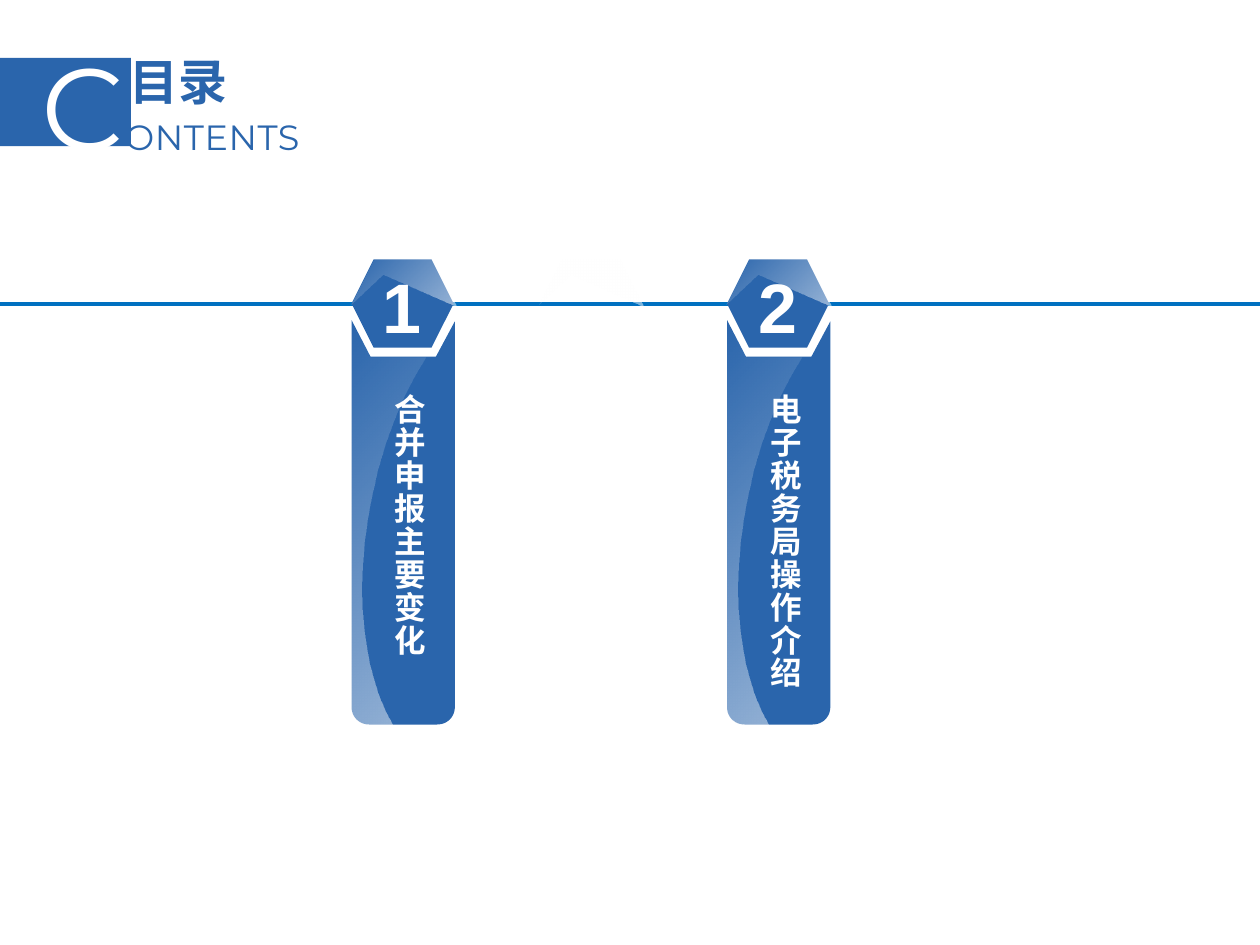
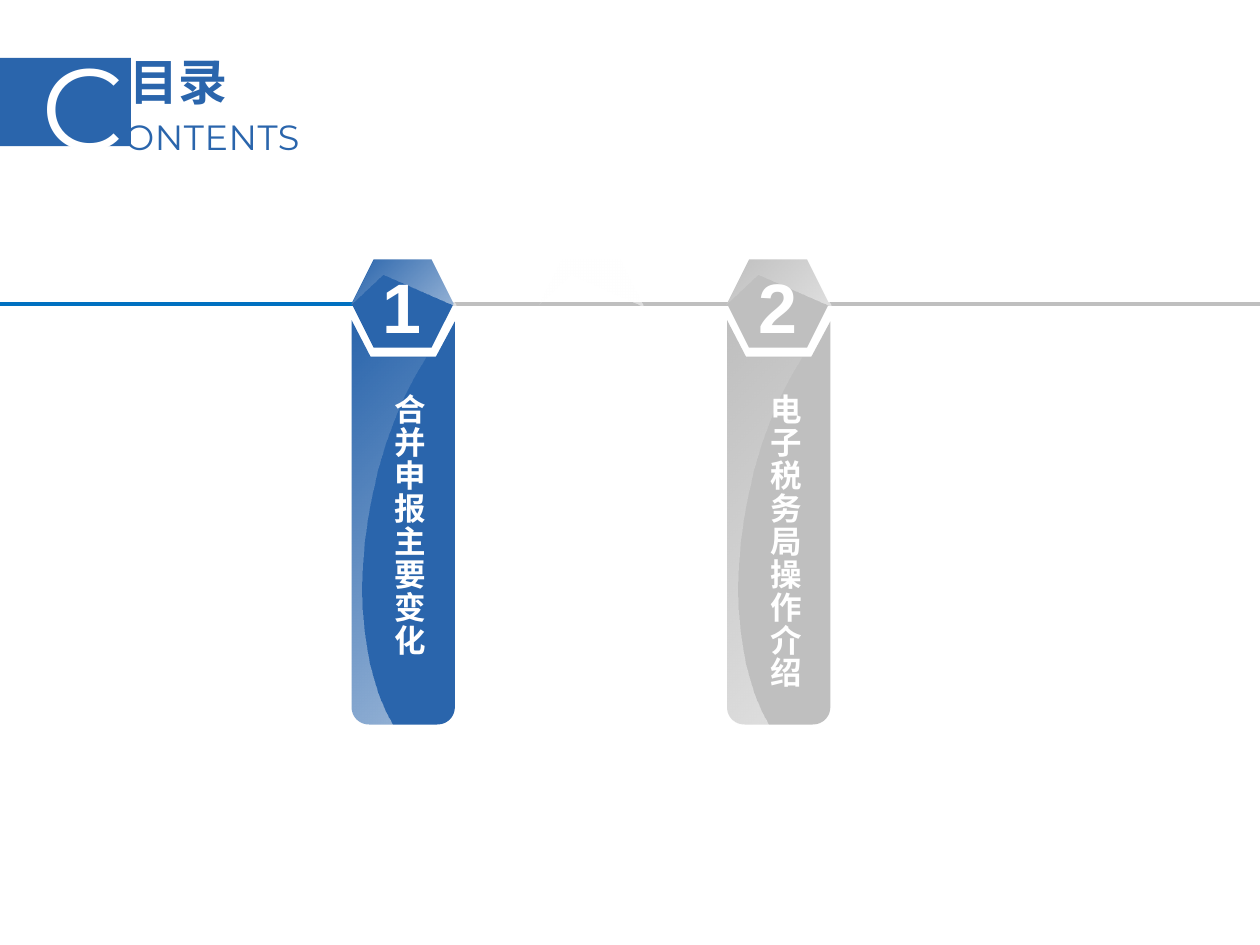
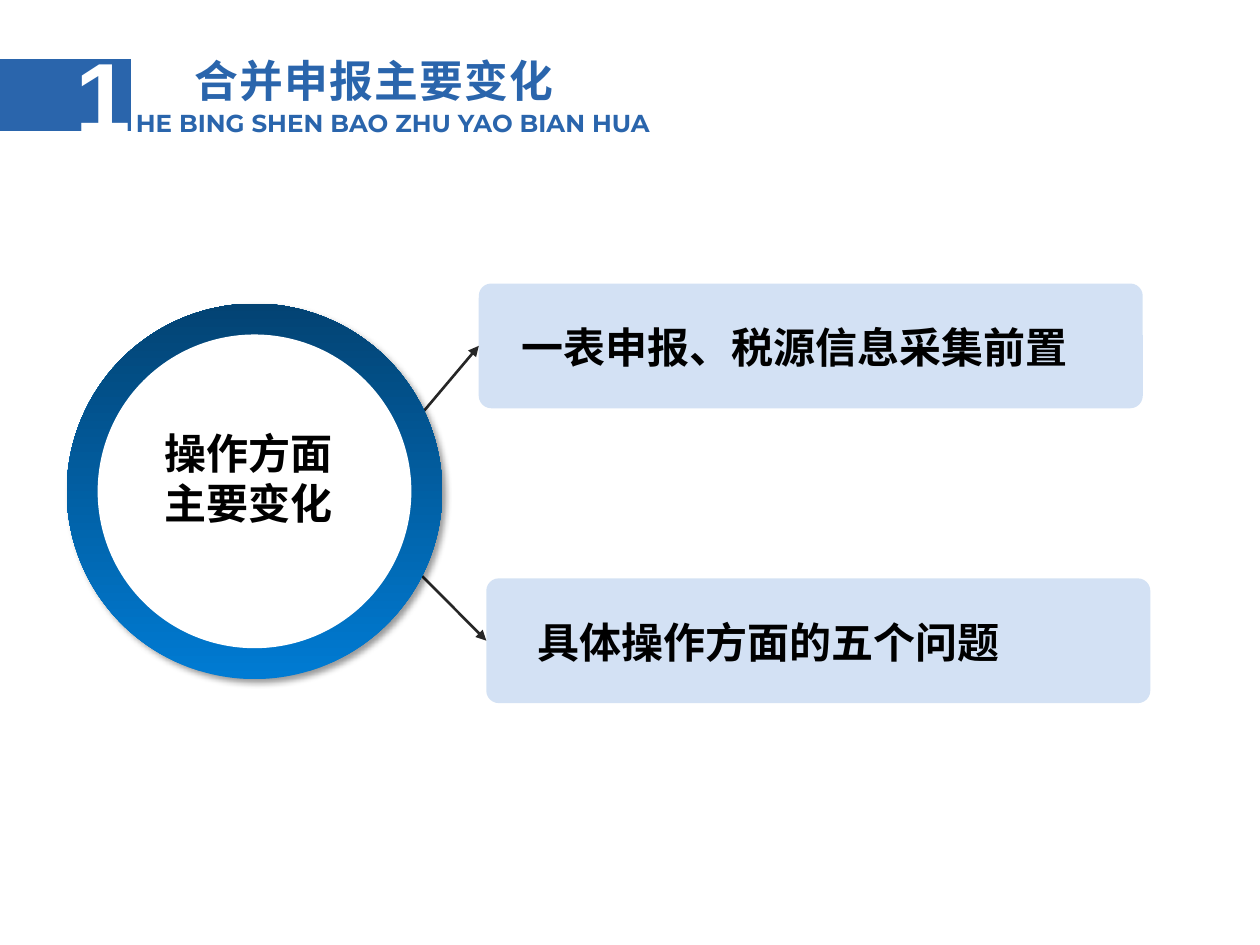
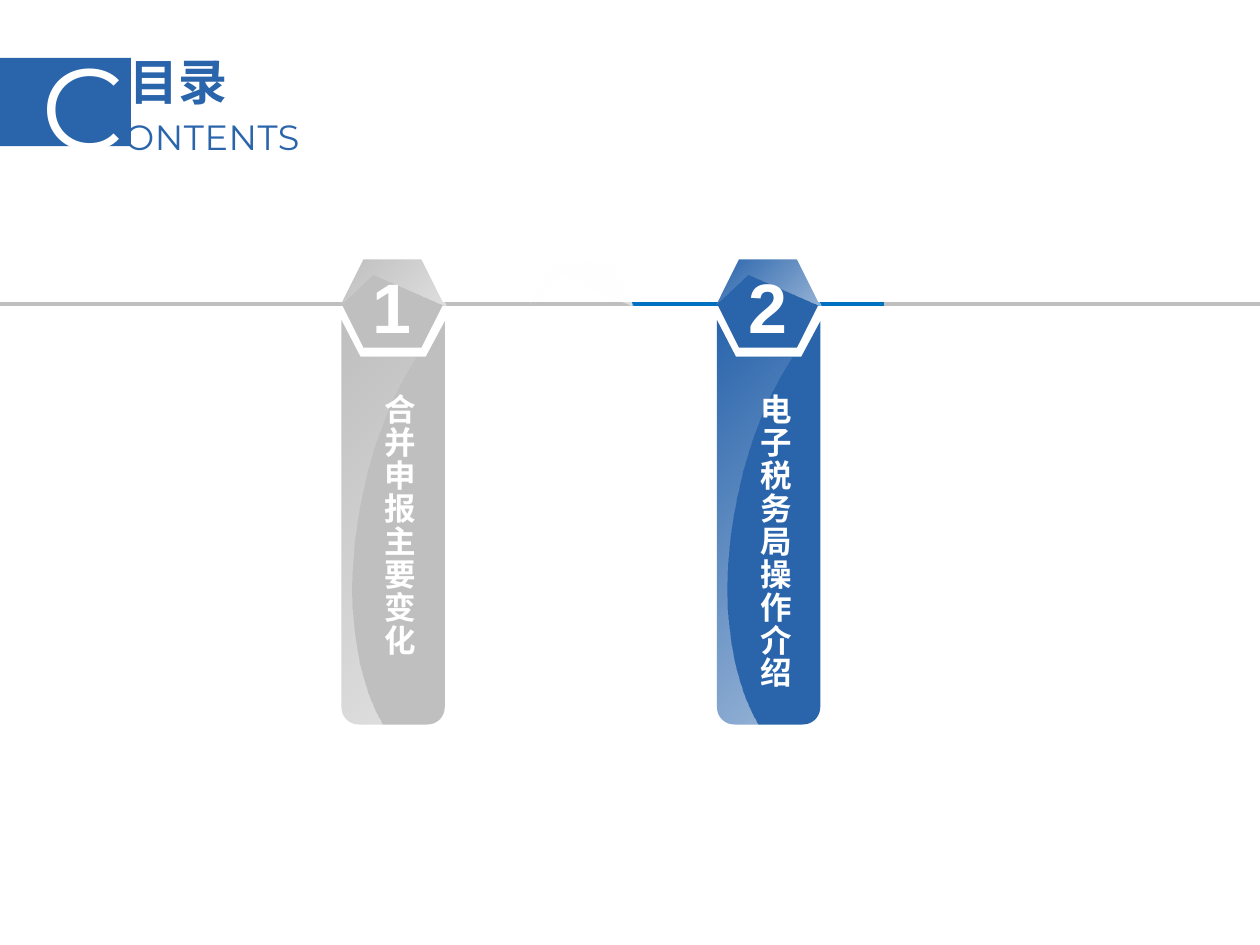
from dataclasses import dataclass

from lxml.etree import SubElement
from pptx import Presentation
from pptx.dml.color import RGBColor
from pptx.enum.shapes import MSO_CONNECTOR, MSO_SHAPE
from pptx.enum.text import MSO_ANCHOR, MSO_AUTO_SIZE, PP_ALIGN
from pptx.oxml import parse_xml
from pptx.oxml.ns import nsdecls, qn
from pptx.util import Inches, Pt


@dataclass(frozen=True)
class Theme:
    blue: str = "2A65AC"
    line_blue: str = "0070C0"
    grey: str = "BFBFBF"
    pale_blue: str = "8EB4E3"
    ring_light: str = "007BD3"
    ring_dark: str = "034373"
    arrow: str = "262626"
    white: str = "FFFFFF"
    black: str = "000000"
    chinese: str = "Noto Sans CJK SC"
    latin: str = "Montserrat"
    digits: str = "Arial"
    initial_size: float = 66
    section_number_size: float = 57
    panel_number_size: float = 40
    contents_size: float = 28
    title_size: float = 25
    body_size: float = 24
    contents_latin_size: float = 20
    panel_size: float = 18
    subtitle_size: float = 14


theme = Theme()

presentation = Presentation()
presentation.slide_width = Inches(10)
presentation.slide_height = Inches(7.5)
title_only = presentation.slide_layouts[5]

# Every length below is in cells of a grid of 10 columns by 7.5 rows.
CELL = presentation.slide_width // 10


def add_text(shape, text, box=None, *, size, color, font, bold=False,
             spacing=0, align=PP_ALIGN.LEFT, vertical=False):
    """Append text to a shape's last paragraph, placing the shape if box is given."""
    frame = shape.text_frame
    if box:
        shape.left, shape.top, shape.width, shape.height = (
            round(length * CELL) for length in box)
        frame.word_wrap = True
        frame.vertical_anchor = MSO_ANCHOR.TOP
        frame.auto_size = MSO_AUTO_SIZE.SHAPE_TO_FIT_TEXT
    if vertical:
        frame._txBody.bodyPr.set("vert", "eaVert")
    for index, line in enumerate(text.split("\n")):
        paragraph = frame.add_paragraph() if index else frame.paragraphs[-1]
        paragraph.alignment = align
        run = paragraph.add_run()
        run.text = line
        run.font.size = Pt(size)
        run.font.bold = bold
        run.font.color.rgb = RGBColor.from_string(color)
        run.font.name = font
        properties = run._r.get_or_add_rPr()
        SubElement(properties, qn("a:ea")).set("typeface", font)
        if spacing:
            properties.set("spc", str(round(spacing * 100)))
    return shape


def add_block(slide, outline, box, *stops, angle=0):
    """Add a preset shape or a list of points; each stop is (colour, opacity %)."""
    left, top, width, height = (round(length * CELL) for length in box)
    if isinstance(outline, list):
        builder = slide.shapes.build_freeform(*outline[0])
        builder.add_line_segments(outline[1:], close=True)
        shape = builder.convert_to_shape(left, top)
    else:
        shape = slide.shapes.add_shape(outline, left, top, width, height)
    shape.shadow.inherit = False
    shape.line.fill.background()
    colors = [f'<a:srgbClr val="{color}"><a:alpha val="{opacity * 1000}"/></a:srgbClr>'
              for color, opacity in stops]
    if len(colors) == 1:
        fill = f'<a:solidFill {nsdecls("a")}>{colors[0]}</a:solidFill>'
    else:
        fill = (f'<a:gradFill {nsdecls("a")} rotWithShape="1"><a:gsLst>'
                f'<a:gs pos="0">{colors[0]}</a:gs><a:gs pos="100000">{colors[1]}</a:gs>'
                f'</a:gsLst><a:lin ang="{angle * 60000}" scaled="0"/></a:gradFill>')
    shape._element.spPr.find(qn("a:ln")).addprevious(parse_xml(fill))
    return shape


# Outlines start at the panel's left edge; six numbers make a Bezier curve.
lower_left = [(0.14, 3.21), (0.06, 3.21, 0, 3.15, 0, 3.07)]
outlines = {
    "panel": [(0, 0), (0.15, 0.29), (0.67, 0.29), (0.82, 0.01), (0.82, 3.07),
              (0.82, 3.15, 0.76, 3.21, 0.68, 3.21), *lower_left],
    "panel gloss": [(0, 0), (0.15, 0.29), (0.59, 0.29),
                    (0.4, 0.59, 0.24, 0.98, 0.16, 1.41),
                    (0.01, 2.14, 0.09, 2.81, 0.33, 3.21), *lower_left],
    "badge gloss": [(0.18, 0), (0.64, 0), (0.69, 0.11), (0.83, 0.37),
                    (0.25, 0.12), (0, 0.35)],
}
CURVE_STEPS = 12
paths = {}
for name, segments in outlines.items():
    points = []
    for segment in segments:
        if len(segment) == 2:
            points.append(segment)
            continue
        corners = [points[-1], segment[:2], segment[2:4], segment[4:]]
        for step in range(1, CURVE_STEPS + 1):
            t = step / CURVE_STEPS
            weights = ((1 - t) ** 3, 3 * t * (1 - t) ** 2, 3 * t ** 2 * (1 - t), t ** 3)
            points.append(tuple(sum(weight * corner[axis]
                                    for weight, corner in zip(weights, corners))
                                for axis in (0, 1)))
    paths[name] = [(round(x * CELL), round(y * CELL)) for x, y in points]

SLOT_PITCH = 1.49
LINE_TOP = 2.41
BADGE_TOP = 2.06
PANEL_TOP = 2.54
gloss = ((theme.white, 0), (theme.white, 52))
chapters = [("1", 0, "合并申报主要变化", 2.3), ("2", 2, "电子税务局操作介绍", 2.7)]

# Each contents page: left edge of the slots, line pieces, colour of each chapter.
contents_pages = [
    (2.79, [(0, 10, theme.line_blue)], [theme.blue, theme.blue]),
    (2.79, [(0, 10, theme.line_blue), (2.9, 10, theme.grey)], [theme.blue, theme.grey]),
    (2.71, [(0, 10, theme.grey), (5.02, 7.02, theme.line_blue)], [theme.grey, theme.blue]),
]
slides = [presentation.slides.add_slide(title_only) for _ in range(4)]
contents_slides = [slides[0], slides[1], slides[3]]

for slide, (slots_left, pieces, colors) in zip(contents_slides, contents_pages):
    for start, end, color in pieces:
        line = slide.shapes.add_connector(
            MSO_CONNECTOR.STRAIGHT, round(start * CELL), round(LINE_TOP * CELL),
            round(end * CELL), round(LINE_TOP * CELL))
        line.line.color.rgb = RGBColor.from_string(color)
        line.line.width = Pt(2.25)

    add_block(slide, paths["badge gloss"], (slots_left + SLOT_PITCH, BADGE_TOP, 0, 0),
              *gloss, angle=45)
    for (number, slot, chapter, height), color in zip(chapters, colors):
        left = slots_left + slot * SLOT_PITCH
        add_block(slide, paths["panel"], (left, PANEL_TOP, 0, 0), (color, 100))
        add_block(slide, paths["panel gloss"], (left, PANEL_TOP, 0, 0), *gloss, angle=45)
        add_text(slide.shapes.add_textbox(0, 0, 0, 0), chapter,
                 (left + 0.16, 3.03, 0.5, height), size=theme.panel_size,
                 color=theme.white, font=theme.chinese, bold=True, spacing=0.8,
                 vertical=True)
        add_block(slide, MSO_SHAPE.HEXAGON, (left, BADGE_TOP, 0.81, 0.7), (color, 100))
        add_block(slide, paths["badge gloss"], (left, BADGE_TOP, 0, 0), *gloss, angle=45)
        add_text(slide.shapes.add_textbox(0, 0, 0, 0), number,
                 (left + 0.15, 2.04, 0.59, 0.77), size=theme.panel_number_size,
                 color=theme.white, font=theme.digits, bold=True)

    add_block(slide, MSO_SHAPE.RECTANGLE, (0, 0.46, 1.04, 0.7), (theme.blue, 100))
    contents = add_text(slide.shapes.add_textbox(0, 0, 0, 0), "C",
                        (0.23, 0.23, 2.55, 1.21), size=theme.initial_size,
                        color=theme.white, font=theme.latin, spacing=0.3)
    add_text(contents, "ONTENTS", size=theme.contents_latin_size, color=theme.blue,
             font=theme.latin, spacing=0.3)
    add_text(slide.shapes.title, "目录", (0.93, 0.36, 1.05, 0.57),
             size=theme.contents_size, color=theme.blue, font=theme.chinese, bold=True)

# Main changes: a ring pointing to two boxes.
slide = slides[2]
add_text(slide.shapes.title, "合并申报主要变化", (1.44, 0.38, 3.42, 0.52),
         size=theme.title_size, color=theme.blue, font=theme.chinese, bold=True,
         spacing=0.8)
add_block(slide, MSO_SHAPE.RECTANGLE, (0, 0.47, 1.04, 0.57), (theme.blue, 100))
add_text(slide.shapes.add_textbox(0, 0, 0, 0), "1", (0.5, 0.22, 0.59, 1.06),
         size=theme.section_number_size, color=theme.white, font=theme.digits, bold=True)
add_text(slide.shapes.add_textbox(0, 0, 0, 0), "HE BING SHEN BAO ZHU YAO BIAN HUA",
         (0.98, 0.81, 4.92, 0.34), size=theme.subtitle_size, color=theme.blue,
         font=theme.latin, bold=True)

changes = [
    ("一表申报、税源信息采集前置", 3.8, 2.25, 4.04, (3.13, 3.54)),
    ("具体操作方面的五个问题", 3.86, 4.59, 4.17, (3.14, 4.36)),
]
for change, left, top, text_left, (arrow_left, arrow_top) in changes:
    box = add_block(slide, MSO_SHAPE.ROUNDED_RECTANGLE, (left, top, 5.27, 0.99),
                    (theme.pale_blue, 39))
    box.adjustments[0] = 0.1
    add_text(slide.shapes.add_textbox(0, 0, 0, 0), change,
             (text_left, top + 0.25, 5.29, 0.5), size=theme.body_size,
             color=theme.black, font=theme.chinese, bold=True)
    arrow = slide.shapes.add_connector(
        MSO_CONNECTOR.STRAIGHT, round(arrow_left * CELL), round(arrow_top * CELL),
        box.left, box.top + box.height // 2)
    arrow.end_connect(box, 1)
    arrow.line.color.rgb = RGBColor.from_string(theme.arrow)
    arrow.line.width = Pt(1.5)
    SubElement(arrow.line._get_or_add_ln(), qn("a:tailEnd")).set("type", "triangle")

ring = add_block(slide, MSO_SHAPE.OVAL, (0.53, 2.41, 2.98, 2.98),
                 (theme.ring_light, 100), (theme.ring_dark, 100), angle=270)
ring._element.spPr.find(qn("a:effectLst")).append(parse_xml(
    f'<a:outerShdw {nsdecls("a")} blurRad="{Pt(4)}" dist="{Pt(3)}" dir="2700000" '
    f'algn="tl" rotWithShape="0"><a:srgbClr val="{theme.black}">'
    '<a:alpha val="40000"/></a:srgbClr></a:outerShdw>'))
center = add_block(slide, MSO_SHAPE.OVAL, (0.78, 2.66, 2.48, 2.48), (theme.white, 100))
center.line.color.rgb = RGBColor.from_string(theme.white)
center.line.width = Pt(0.75)
add_text(slide.shapes.add_textbox(0, 0, 0, 0), "操作方面\n主要变化",
         (0.86, 3.34, 2.22, 0.91), size=theme.body_size, color=theme.black,
         font=theme.chinese, bold=True, align=PP_ALIGN.CENTER)

# Connectors take a shadow from the theme unless their effect list is empty.
for slide in slides:
    for connector in slide.shapes._spTree.findall(qn("p:cxnSp")):
        SubElement(connector.spPr, qn("a:effectLst"))

presentation.save("out.pptx")
